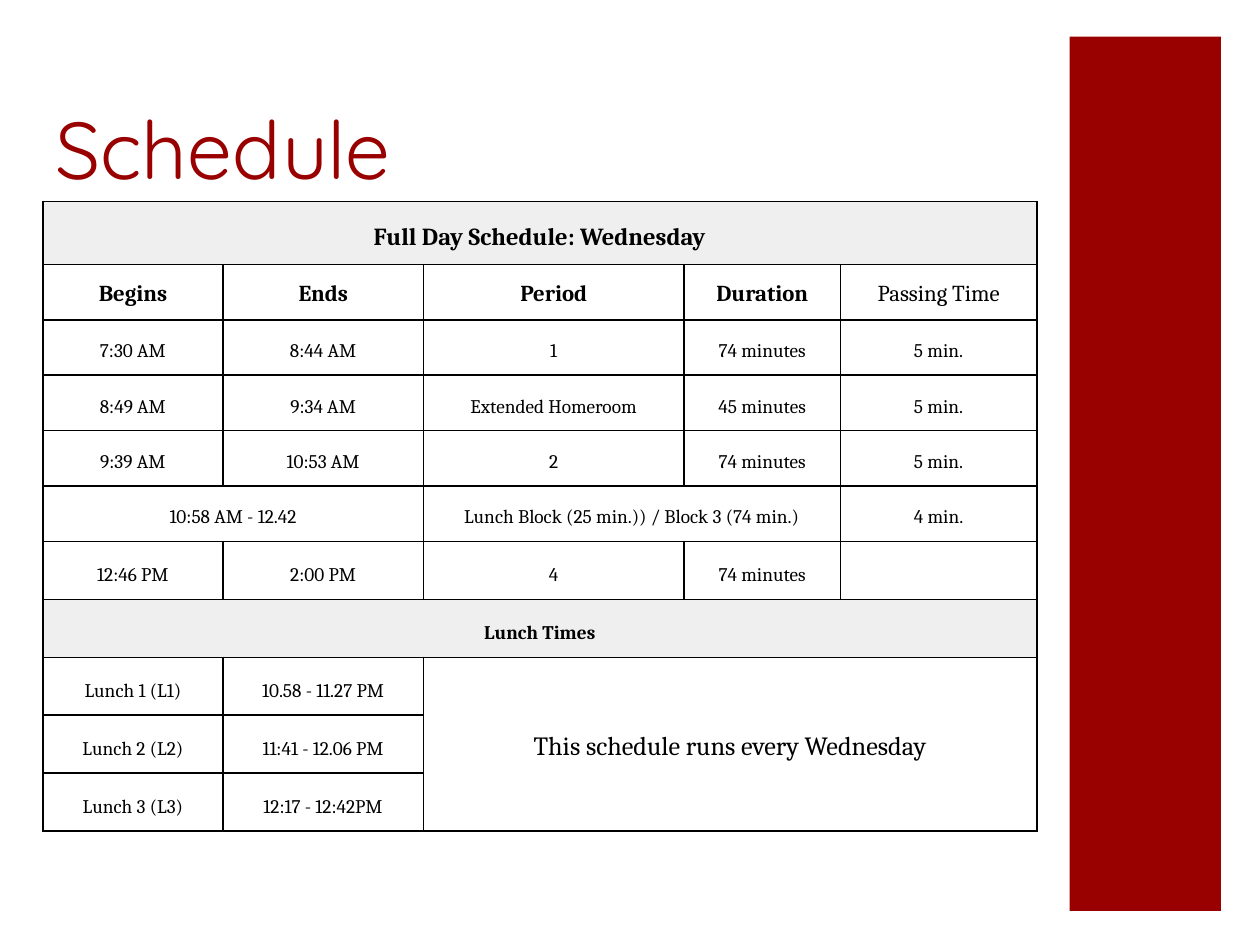
from lxml.etree import SubElement
from pptx import Presentation
from pptx.dml.color import RGBColor
from pptx.enum.shapes import MSO_SHAPE
from pptx.enum.text import MSO_ANCHOR, PP_ALIGN
from pptx.oxml.ns import qn
from pptx.util import Inches, Pt

COLORS = {"red": "990000", "black": "000000", "band": "EFEFEF", "white": "FFFFFF"}

COL_WIDTHS = [1.43, 1.59, 2.07, 1.24, 1.56]
ROW_HEIGHTS = [0.5, 0.42] + [0.44] * 4 + [0.46] * 5

# Cells covered by a merge, and the one blank cell, are None
ROWS = [
    ["Full Day Schedule: Wednesday", None, None, None, None],
    ["Begins", "Ends", "Period", "Duration", "Passing Time"],
    ["7:30 AM", "8:44 AM", "1", "74 minutes", "5 min."],
    ["8:49 AM", "9:34 AM", "Extended Homeroom", "45 minutes", "5 min."],
    ["9:39 AM", "10:53 AM", "2", "74 minutes", "5 min."],
    ["10:58 AM - 12.42", None, "Lunch Block (25 min.)) / Block 3 (74 min.)", None, "4 min."],
    ["12:46 PM", "2:00 PM", "4", "74 minutes", None],
    ["Lunch Times", None, None, None, None],
    ["Lunch 1 (L1)", "10.58 - 11.27 PM", "This schedule runs every Wednesday", None, None],
    ["Lunch 2 (L2)", "11:41 - 12.06 PM", None, None, None],
    ["Lunch 3 (L3)", "12:17 - 12:42PM", None, None, None],
]
TITLE_ROW, HEADER_ROW, LUNCH_ROW = 0, 1, 7
NOTE_CELL = (8, 2)

# First and last cell of each merged area
MERGES = [((0, 0), (0, 4)), ((5, 0), (5, 1)), ((5, 2), (5, 3)),
          ((7, 0), (7, 4)), ((8, 2), (10, 4))]


def rgb(name):
    return RGBColor.from_string(COLORS[name])


def add_run(p, text, font, size, color, bold=False):
    r = p.add_run()
    r.text = text
    r.font.name = font
    r.font.size = Pt(size)
    r.font.bold = bold
    r.font.color.rgb = rgb(color)


def add_side_bar(s):
    bar = s.shapes.add_shape(MSO_SHAPE.RECTANGLE, Inches(8.49), Inches(0.29),
                             Inches(1.2), Inches(6.94))
    bar.shadow.inherit = False
    bar.fill.solid()
    bar.fill.fore_color.rgb = rgb("red")
    bar.line.fill.background()


def set_title(s, text):
    sp = s.shapes.title
    sp.left, sp.top = Inches(0.34), Inches(0.35)
    sp.width, sp.height = Inches(7.42), Inches(1.25)
    tf = sp.text_frame
    tf.word_wrap = True
    tf.vertical_anchor = MSO_ANCHOR.BOTTOM
    p = tf.paragraphs[0]
    p.alignment = PP_ALIGN.LEFT
    add_run(p, text, "Quicksand", 46, "red")


def set_borders(cell):
    tc_pr = cell._tc.get_or_add_tcPr()
    for side in ("a:lnL", "a:lnR", "a:lnT", "a:lnB"):
        ln = SubElement(tc_pr, qn(side), w=str(Pt(1)))
        fill = SubElement(ln, qn("a:solidFill"))
        SubElement(fill, qn("a:srgbClr"), val=COLORS["black"])


def cell_style(row, col):
    """Return font size, bold and fill colour for a cell."""
    if row == TITLE_ROW:
        return 14, True, "band"
    if row == HEADER_ROW:
        return 13, col < len(COL_WIDTHS) - 1, "white"
    if row == LUNCH_ROW:
        return 11, True, "band"
    if (row, col) == NOTE_CELL:
        return 15, False, "white"
    return 11, False, None


def fill_cell(cell, row, col, text):
    size, bold, fill = cell_style(row, col)
    set_borders(cell)
    if fill:
        cell.fill.solid()
        cell.fill.fore_color.rgb = rgb(fill)
    else:
        cell.fill.background()
    if text is None:
        return
    cell.margin_left = cell.margin_right = Inches(0.03)
    cell.margin_top = cell.margin_bottom = Inches(0.1)
    is_note = (row, col) == NOTE_CELL
    cell.vertical_anchor = MSO_ANCHOR.MIDDLE if is_note else MSO_ANCHOR.BOTTOM
    p = cell.text_frame.paragraphs[0]
    p.alignment = PP_ALIGN.CENTER
    p.line_spacing = 1.15
    add_run(p, text, "Cambria", size, "black", bold)


def add_schedule(s):
    table = s.shapes.add_table(len(ROWS), len(COL_WIDTHS), Inches(0.34), Inches(1.6),
                               Inches(sum(COL_WIDTHS)), Inches(sum(ROW_HEIGHTS))).table
    table.first_row = table.horz_banding = False
    for column, width in zip(table.columns, COL_WIDTHS):
        column.width = Inches(width)
    for table_row, height in zip(table.rows, ROW_HEIGHTS):
        table_row.height = Inches(height)
    for first, last in MERGES:
        table.cell(*first).merge(table.cell(*last))
    for row, texts in enumerate(ROWS):
        for col, text in enumerate(texts):
            fill_cell(table.cell(row, col), row, col, text)


def main():
    prs = Presentation()
    prs.slide_width, prs.slide_height = Inches(10), Inches(7.5)
    s = prs.slides.add_slide(prs.slide_layouts[5])  # Title Only
    add_side_bar(s)
    set_title(s, "Schedule")
    add_schedule(s)
    prs.save("out.pptx")


if __name__ == "__main__":
    main()
